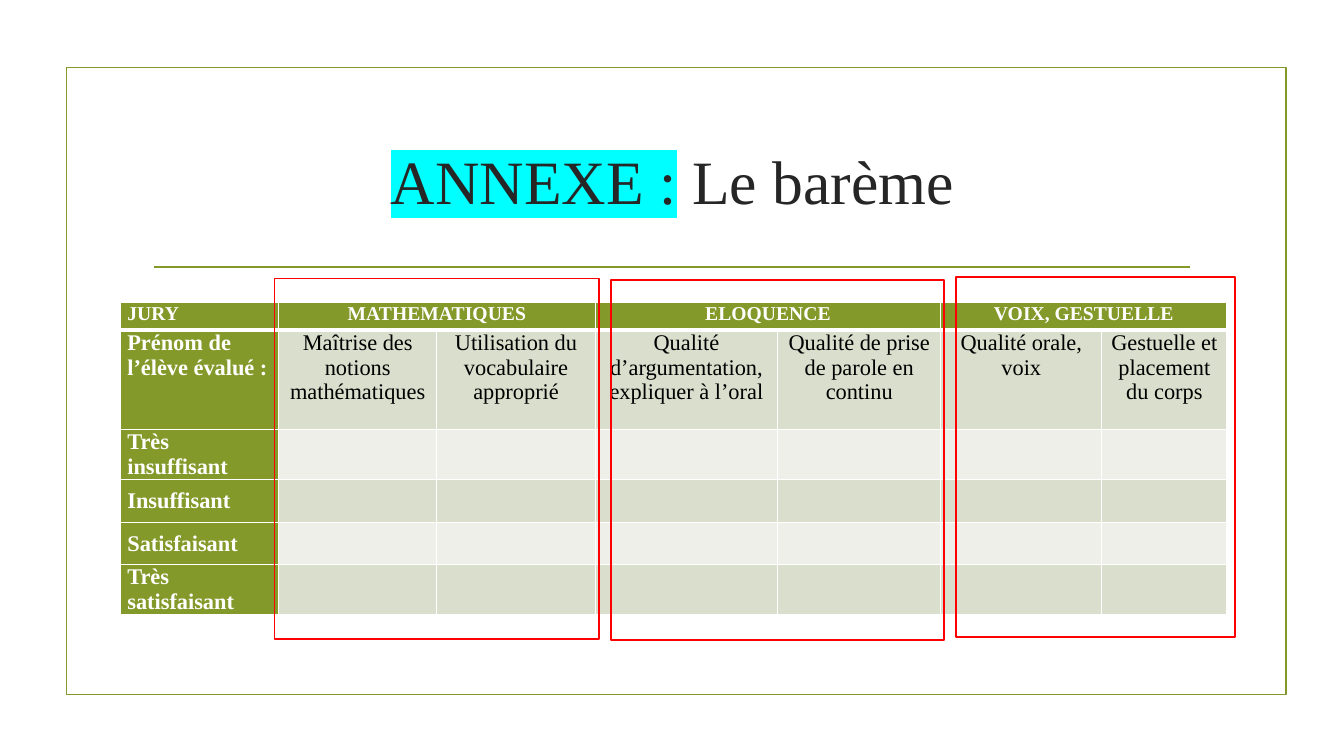
from lxml.etree import SubElement
from pptx import Presentation
from pptx.dml.color import RGBColor
from pptx.enum.shapes import MSO_CONNECTOR, MSO_SHAPE
from pptx.enum.text import MSO_ANCHOR, MSO_AUTO_SIZE, PP_ALIGN
from pptx.oxml.ns import qn
from pptx.util import Cm, Pt

COLORS = {"green": "83992A", "red": "FF0000", "title": "262626", "cyan": "00FFFF",
          "white": "FFFFFF", "black": "000000", "dark_band": "D9DECD", "light_band": "EDEFE8"}


def rgb(name):
    return RGBColor.from_string(COLORS[name])


def add_text(tf, text, size=16, color="black", bold=False, align=PP_ALIGN.LEFT, highlight=None):
    """Append one formatted run to the first paragraph."""
    p = tf.paragraphs[0]
    p.alignment = align
    r = p.add_run()
    r.text = text
    r.font.name = "Times New Roman"
    r.font.size = Pt(size)
    r.font.bold = bold
    r.font.color.rgb = rgb(color)
    if highlight:
        rPr = r.font._element
        mark = SubElement(rPr, qn("a:highlight"))
        SubElement(mark, qn("a:srgbClr"), val=COLORS[highlight])
        rPr.find(qn("a:latin")).addprevious(mark)


prs = Presentation()
prs.slide_width, prs.slide_height = Cm(33.87), Cm(19.05)
s = prs.slides.add_slide(prs.slide_layouts[5])

# Title
title = s.shapes.title
title.left, title.top, title.width, title.height = Cm(3.61), Cm(2.72), Cm(26.67), Cm(3.63)
tf = title.text_frame
tf.word_wrap = True
tf.auto_size = MSO_AUTO_SIZE.NONE
tf.vertical_anchor = MSO_ANCHOR.MIDDLE
add_text(tf, "ANNEXE :", size=44, color="title", align=PP_ALIGN.CENTER, highlight="cyan")
add_text(tf, " Le barème", size=44, color="title", align=PP_ALIGN.CENTER)

# Rule under the title
rule = s.shapes.add_connector(MSO_CONNECTOR.STRAIGHT, Cm(3.89), Cm(6.73), Cm(30), Cm(6.73))
rule.line.color.rgb = rgb("green")
rule.line.width = Pt(1.25)
SubElement(rule._element.spPr, qn("a:effectLst"))

# Grading table
widths = [3.99, 3.99, 3.99, 4.6, 4.11, 4.06, 3.15]
heights = [0.69, 2.5, 1.26, 1.08, 1.07, 1.26]
rows = [
    ["JURY", "MATHEMATIQUES", "", "ELOQUENCE", "", "VOIX, GESTUELLE", ""],
    ["Prénom de l’élève évalué :", "Maîtrise des notions mathématiques",
     "Utilisation du vocabulaire approprié", "Qualité d’argumentation, expliquer à l’oral",
     "Qualité de prise de parole en continu", "Qualité orale, voix",
     "Gestuelle et placement du corps"],
    *[[level] + [""] * 6
      for level in ["Très insuffisant", "Insuffisant", "Satisfaisant", "Très satisfaisant"]],
]
table = s.shapes.add_table(len(heights), len(widths), Cm(3.03), Cm(7.63),
                           Cm(sum(widths)), Cm(sum(heights))).table
for column, width in zip(table.columns, widths):
    column.width = Cm(width)
for row, height in zip(table.rows, heights):
    row.height = Cm(height)
for left in (1, 3, 5):
    table.cell(0, left).merge(table.cell(0, left + 1))

for i, texts in enumerate(rows):
    for j, text in enumerate(texts):
        cell = table.cell(i, j)
        cell.margin_left = cell.margin_right = Cm(0.18)
        cell.margin_top = cell.margin_bottom = 0
        cell.vertical_anchor = MSO_ANCHOR.MIDDLE if i > 1 else MSO_ANCHOR.TOP
        for side in "LRTB":
            width = Pt(3) if (i, side) in [(0, "B"), (1, "T")] else Pt(1)
            ln = SubElement(cell._tc.get_or_add_tcPr(), qn(f"a:ln{side}"), w=str(width))
            SubElement(SubElement(ln, qn("a:solidFill")), qn("a:srgbClr"), val=COLORS["white"])
        heading = i == 0 or j == 0
        band = "dark_band" if i % 2 else "light_band"
        cell.fill.solid()
        cell.fill.fore_color.rgb = rgb("green" if heading else band)
        if text:
            add_text(cell.text_frame, text, size=16 if i else 14, bold=heading,
                     color="white" if heading else "black",
                     align=PP_ALIGN.CENTER if j else PP_ALIGN.LEFT)
        else:
            cell.text_frame.paragraphs[0].font.size = Pt(14)

# Slide frame, then one red box around each group of criteria
boxes = [
    (1.68, 1.7, 30.73, 15.8, "green"),
    (6.92, 7.02, 8.18, 9.08, "red"),
    (15.4, 7.05, 8.4, 9.08, "red"),
    (24.1, 6.98, 7.03, 9.08, "red"),
]
for left, top, width, height, color in boxes:
    box = s.shapes.add_shape(MSO_SHAPE.RECTANGLE, Cm(left), Cm(top), Cm(width), Cm(height))
    box.shadow.inherit = False
    box.fill.background()
    box.line.color.rgb = rgb(color)
    box.line.width = Pt(1.25)

prs.save("out.pptx")
